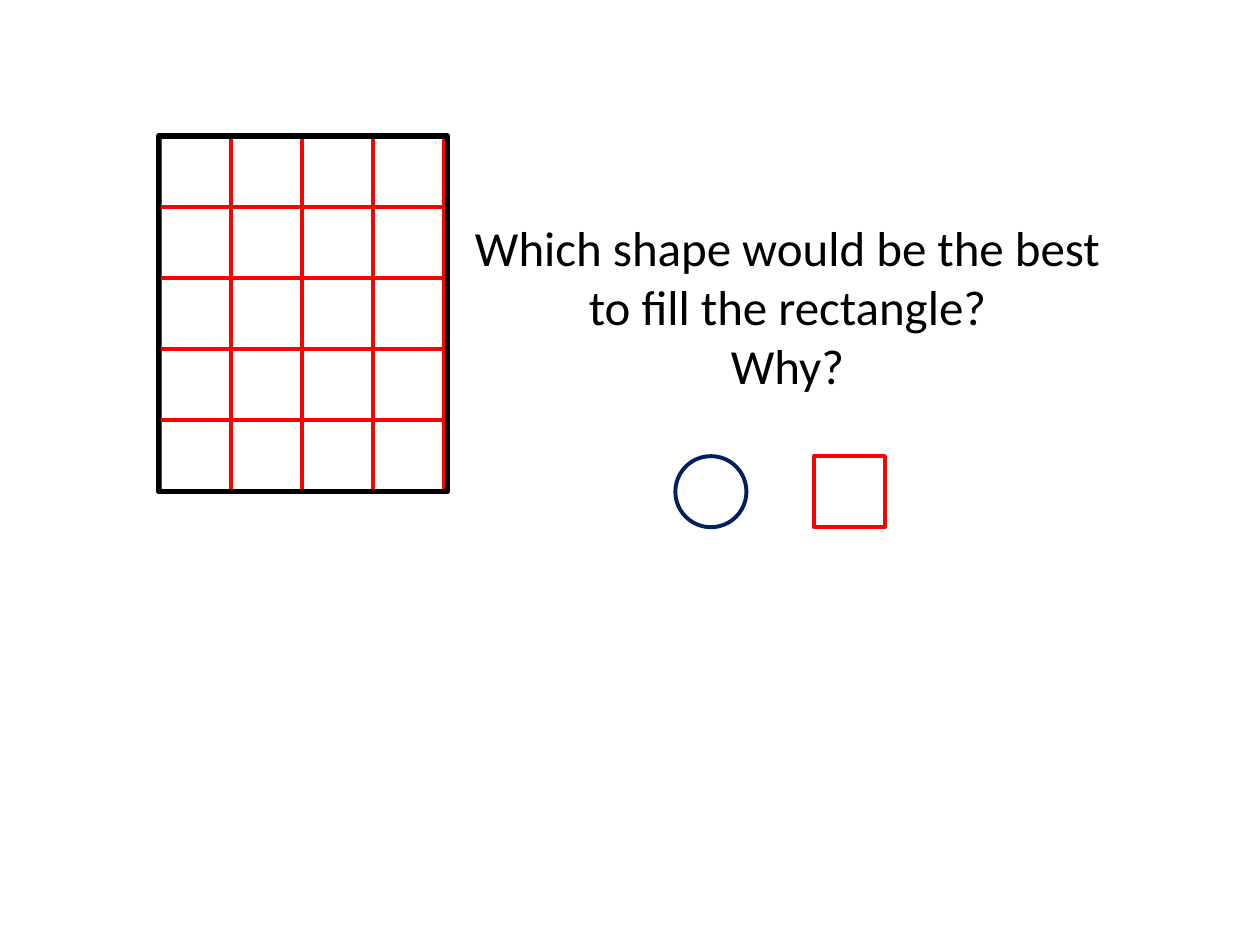
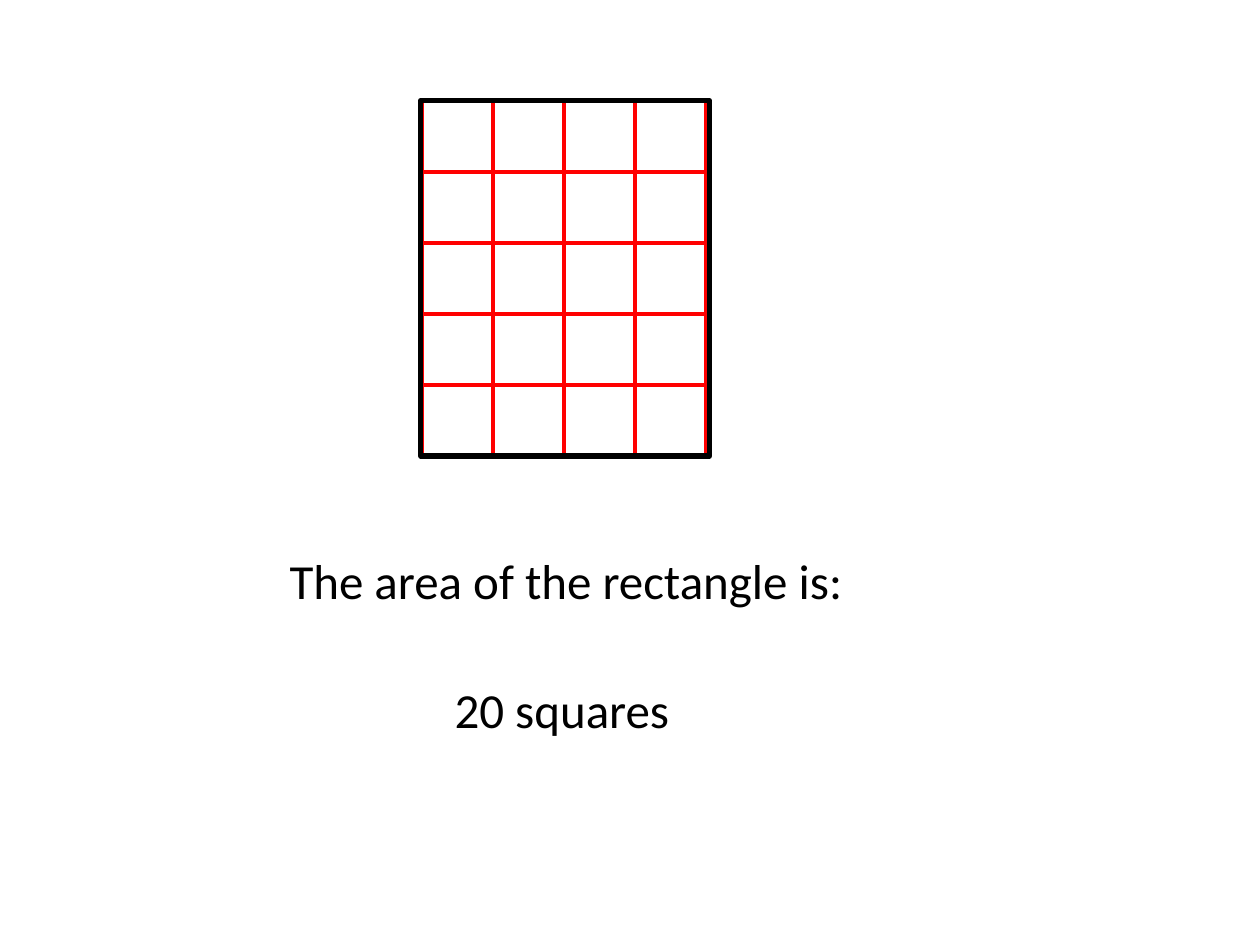
from pptx import Presentation, util as u
from pptx.dml.color import RGBColor
from pptx.enum import shapes, text

# Content: frame corner, single shapes and text boxes of each slide
RED, NAVY, BLACK = "FF0000", "002060", "000000"
RECT, OVAL = shapes.MSO_SHAPE.RECTANGLE, shapes.MSO_SHAPE.OVAL
LEFT, MID = text.PP_ALIGN.LEFT, text.PP_ALIGN.CENTER

SLIDES = [
    {
        "frame": (1.26, 1.08),
        "tiles": [(RECT, 6.46, 3.62, RED), (OVAL, 5.36, 3.62, NAVY)],
        "texts": [((3.62, 1.68, 5.26, 1.51), MID,
                   ["Which shape would be the best to fill the rectangle?",
                    "Why?"])],
    },
    {
        "frame": (3.34, 0.8),
        "tiles": [],
        "texts": [((2.2, 4.32, 6.27, 0.57), LEFT,
                   ["The area of the rectangle is:"]),
                  ((3.51, 5.34, 2.33, 0.57), LEFT, ["20 squares"])],
    },
]

# Shared grid and type
COLS, ROWS = 4, 5
WIDE, HIGH = 2.29, 2.82
SIDE = HIGH / ROWS
INSET = 0.01
FONT, SIZE = "Calibri", 28


def color(code):
    return RGBColor.from_string(code)


def outline(slide, kind, box, code, weight=2.25):
    shape = slide.shapes.add_shape(kind, *map(u.Inches, box))
    shape.shadow.inherit = False
    shape.fill.background()
    shape.line.color.rgb = color(code)
    shape.line.width = u.Pt(weight)


def grid(slide, left, top):
    for col in range(COLS):
        for row in range(ROWS):
            box = (left + INSET + col * SIDE, top + row * SIDE, SIDE, SIDE)
            outline(slide, RECT, box, RED)
    outline(slide, RECT, (left, top, WIDE, HIGH), BLACK, 3)


def write(slide, box, align, lines):
    frame = slide.shapes.add_textbox(*map(u.Inches, box)).text_frame
    frame.word_wrap = True
    frame.auto_size = text.MSO_AUTO_SIZE.SHAPE_TO_FIT_TEXT
    frame.text = "\n".join(lines)
    for para in frame.paragraphs:
        para.alignment = align
        para.font.name = FONT
        para.font.size = u.Pt(SIZE)
        para.font.color.rgb = color(BLACK)


def main():
    deck = Presentation()
    deck.slide_width, deck.slide_height = u.Inches(10), u.Inches(7.5)
    for item in SLIDES:
        slide = deck.slides.add_slide(deck.slide_layouts[6])
        grid(slide, *item["frame"])
        for kind, left, top, code in item["tiles"]:
            outline(slide, kind, (left, top, SIDE, SIDE), code)
        for box, align, lines in item["texts"]:
            write(slide, box, align, lines)
    deck.save("out.pptx")


if __name__ == "__main__":
    main()
